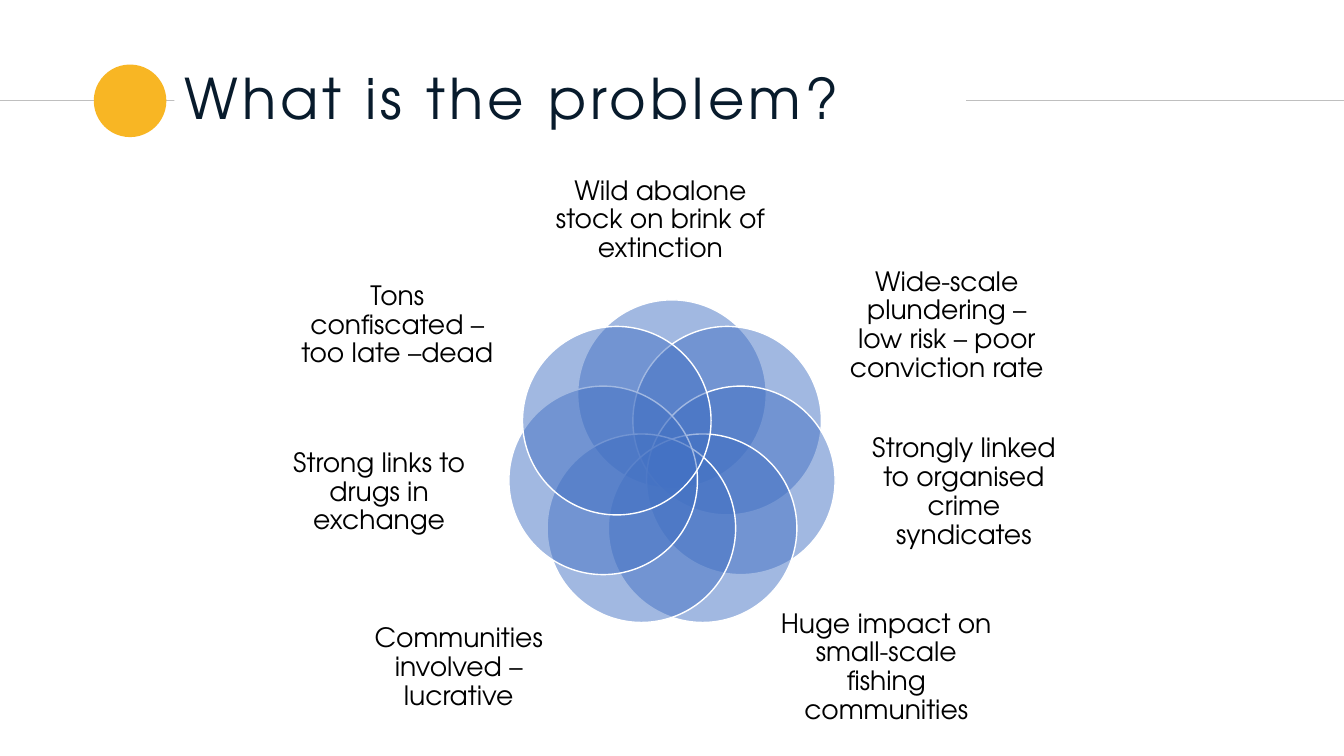
"""Build the slide on the abalone poaching problem with a seven-petal Venn ring."""
import math

import pptx
import pptx.util
import pptx.dml.color
import pptx.enum.shapes
import pptx.enum.text
import pptx.oxml.ns
import pptx.oxml.xmlchemy

Inches = pptx.util.Inches
Pt = pptx.util.Pt
SHAPES = pptx.enum.shapes.MSO_SHAPE
ALIGN = pptx.enum.text.PP_ALIGN

COLOURS = {
    "rule": "BFBFBF",
    "dot": "F8B624",
    "petal": "4472C4",
    "white": "FFFFFF",
    "label": "000000",
    "title": "081B2C",
}
FONT = "TeX Gyre Adventor"
SLIDE_WIDTH, SLIDE_HEIGHT = 13.33, 7.5
RULE_TOP = 1

TITLE = "What is the problem?"
TITLE_BOX = (1.73, 0.28, 7.85, 1.45)
DOT_BOX = (0.93, 0.64, 0.72, 0.72)

LABELS = [
    ("Wild abalone stock on brink of extinction", (5.48, 1.61, 2.14, 1.15)),
    ("Wide-scale plundering – low risk – poor conviction rate", (8.38, 2.6, 2.02, 1.26)),
    ("Strongly linked to organised crime syndicates", (8.57, 4.21, 1.98, 1.35)),
    ("Huge impact on small-scale fishing communities", (7.72, 6.01, 2.14, 1.23)),
    ("Communities involved – lucrative", (3.48, 6.01, 2.14, 1.23)),
    ("Strong links to drugs in exchange", (2.77, 4.21, 1.98, 1.35)),
    ("Tons confiscated – too late –dead", (2.93, 2.6, 2.02, 1.26)),
]
RING_CENTRE = (SLIDE_WIDTH / 2, 4.61)
RING_RADIUS = 0.7
PETAL_SIZE = 1.87

LABEL_FORMAT = {"size": Pt(19), "name": FONT}
TITLE_FORMAT = {"size": Pt(40), "name": FONT}
NO_MARGINS = dict.fromkeys(("margin_left", "margin_top", "margin_right", "margin_bottom"), 0)


def colour(name):
    return pptx.dml.color.RGBColor.from_string(COLOURS[name])


def set_all(target, values):
    for name, value in values.items():
        setattr(target, name, value)


def add_filled(slide, kind, box, fill):
    shape = slide.shapes.add_shape(kind, *map(Inches, box))
    shape.shadow.inherit = False
    shape.fill.solid()
    shape.fill.fore_color.rgb = colour(fill)
    shape.line.fill.background()
    return shape


def write_text(shape, text, font_format, ink, alignment, margins):
    frame = shape.text_frame
    set_all(frame, {"word_wrap": True, "vertical_anchor": pptx.enum.text.MSO_ANCHOR.MIDDLE, **margins})
    paragraph = frame.paragraphs[0]
    set_all(paragraph, {"alignment": alignment, "line_spacing": 0.9})
    run = paragraph.add_run()
    run.text = text
    set_all(run.font, font_format)
    run.font.color.rgb = colour(ink)
    return run


def add_rule(slide):
    ends = (0, RULE_TOP, SLIDE_WIDTH, RULE_TOP)
    rule = slide.shapes.add_connector(pptx.enum.shapes.MSO_CONNECTOR.STRAIGHT, *map(Inches, ends))
    rule.line.color.rgb = colour("rule")
    rule.line.width = Pt(0.5)
    rule._element.spPr.append(pptx.oxml.xmlchemy.OxmlElement("a:effectLst"))


def add_petal(slide, index):
    angle = 2 * math.pi * index / len(LABELS)
    left = RING_CENTRE[0] + RING_RADIUS * math.sin(angle) - PETAL_SIZE / 2
    top = RING_CENTRE[1] - RING_RADIUS * math.cos(angle) - PETAL_SIZE / 2
    petal = add_filled(slide, SHAPES.OVAL, (left, top, PETAL_SIZE, PETAL_SIZE), "petal")
    petal.line.color.rgb = colour("white")
    petal.line.width = Pt(1)
    fill = petal._element.spPr.find(pptx.oxml.ns.qn("a:solidFill"))
    alpha = pptx.oxml.xmlchemy.OxmlElement("a:alpha")
    alpha.set("val", "50000")
    fill[0].append(alpha)


def main():
    presentation = pptx.Presentation()
    set_all(presentation, {"slide_width": Inches(SLIDE_WIDTH), "slide_height": Inches(SLIDE_HEIGHT)})
    slide = presentation.slides.add_slide(presentation.slide_layouts[6])

    add_rule(slide)
    add_filled(slide, SHAPES.OVAL, DOT_BOX, "dot")
    for index, (text, box) in enumerate(LABELS):
        add_petal(slide, index)
        label = slide.shapes.add_textbox(*map(Inches, box))
        write_text(label, text, LABEL_FORMAT, "label", ALIGN.CENTER, NO_MARGINS)

    title = add_filled(slide, SHAPES.RECTANGLE, TITLE_BOX, "white")
    run = write_text(title, TITLE, TITLE_FORMAT, "title", ALIGN.LEFT, {})
    run.font._element.set("spc", "300")

    presentation.save("out.pptx")


if __name__ == "__main__":
    main()
